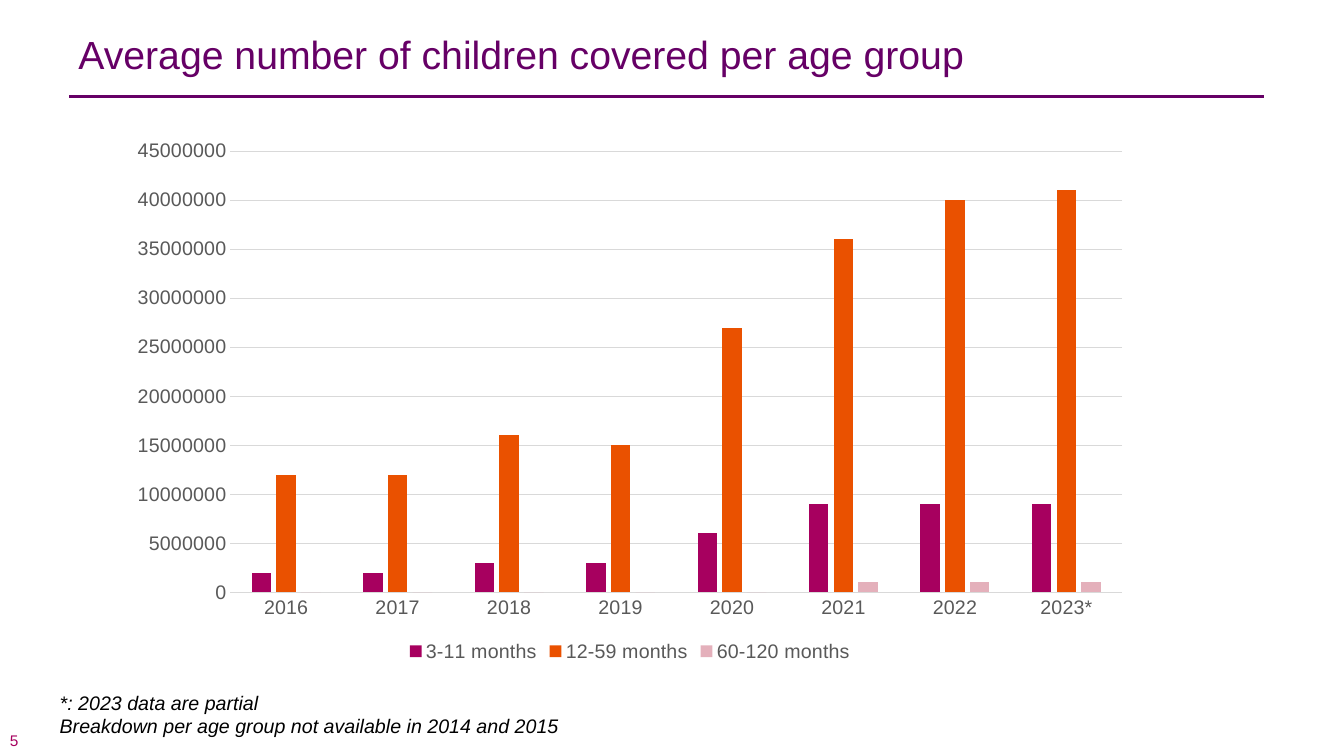
"""Build a slide with a column chart of children covered per age group."""
from lxml import etree
from pptx import Presentation
from pptx.chart.data import CategoryChartData
from pptx.dml.color import RGBColor
from pptx.enum.chart import XL_CHART_TYPE, XL_LEGEND_POSITION, XL_TICK_MARK
from pptx.enum.shapes import MSO_CONNECTOR
from pptx.enum.text import MSO_ANCHOR
from pptx.oxml.ns import qn
from pptx.util import Inches, Pt

COLUMN = XL_CHART_TYPE.COLUMN_CLUSTERED
BOTTOM = XL_LEGEND_POSITION.BOTTOM
NO_TICK = XL_TICK_MARK.NONE
STRAIGHT = MSO_CONNECTOR.STRAIGHT
TOP, MIDDLE = MSO_ANCHOR.TOP, MSO_ANCHOR.MIDDLE

FACE = "Arial"
HEX = {"plum": "660066", "wine": "A7005F", "orange": "EA5100", "pink": "E4B0BB",
       "label": "595959", "grid": "D9D9D9", "black": "000000"}
COLOR = {name: RGBColor.from_string(code) for name, code in HEX.items()}

deck = Presentation()
deck.slide_width, deck.slide_height = Inches(13.33), Inches(7.5)
slide = deck.slides.add_slide(deck.slide_layouts[6])
col, row = deck.slide_width / 100, deck.slide_height / 100


def place(left, top, width, height):
    """Turn percentages of the slide into lengths."""
    return [int(left * col), int(top * row), int(width * col), int(height * row)]


def style(font, size, color):
    """Set the face, size and colour of a font."""
    font.name, font.size = FACE, Pt(size)
    font.color.rgb = COLOR[color]


texts = [
    (["5"], (0, 96.7, 7.95, 2.4), 11, "wine", MIDDLE, False, None),
    (["Average number of children covered per age group"],
     (5.1, 4.8, 89, 10), 28, "plum", TOP, False, Pt(26)),
    (["*: 2023 data are partial", "Breakdown per age group not available in 2014 and 2015"],
     (3.7, 90.67, 70, 7.6), 14, "black", TOP, True, None),
]
for lines, area, size, color, anchor, slant, pitch in texts:
    frame = slide.shapes.add_textbox(*place(*area)).text_frame
    frame.word_wrap = True
    frame.vertical_anchor = anchor
    for spot, line in enumerate(lines):
        para = frame.add_paragraph() if spot else frame.paragraphs[0]
        para.line_spacing = pitch
        run = para.add_run()
        run.text = line
        run.font.italic = slant
        style(run.font, size, color)

left, level, right, _ = place(5.15, 12.8, 94.07, 0)
rule = slide.shapes.add_connector(STRAIGHT, left, level, right, level)
rule.line.color.rgb = COLOR["plum"]
rule.line.width = Pt(2)
etree.SubElement(rule._element.spPr, qn("a:effectLst"))

MILLION = 1000000
groups = [
    ("3-11 months", "wine", [2, 2, 3, 3, 6, 9, 9, 9]),
    ("12-59 months", "orange", [12, 12, 16, 15, 27, 36, 40, 41]),
    ("60-120 months", "pink", [0, 0, 0, 0, 0, 1, 1, 1]),
]
data = CategoryChartData()
data.categories = [str(year) for year in range(2016, 2023)] + ["2023*"]
for name, _, counts in groups:
    data.add_series(name, [count * MILLION for count in counts])

chart = slide.shapes.add_chart(COLUMN, *place(8.72, 17.12, 76.3, 71.03), data).chart
chart.has_title = False
style(chart.font, 10, "black")
chart.has_legend = True
chart.legend.position = BOTTOM
chart.legend.include_in_layout = False
style(chart.legend.font, 14, "label")

plot = chart.plots[0]
plot.vary_by_categories = False
plot.gap_width, plot.overlap = 219, -27
for bars, (_, color, _) in zip(plot.series, groups):
    bars.format.fill.solid()
    bars.format.fill.fore_color.rgb = COLOR[color]

years, scale = chart.category_axis, chart.value_axis
for axis in (years, scale):
    axis.major_tick_mark = axis.minor_tick_mark = NO_TICK
    style(axis.tick_labels.font, 14, "label")
scale.minimum_scale, scale.maximum_scale = 0, 45 * MILLION
scale.major_unit = 5 * MILLION
scale.tick_labels.number_format = "0"
scale.tick_labels.number_format_is_linked = False
scale.format.line.fill.background()
scale.has_major_gridlines = True
for part in (years, scale.major_gridlines):
    part.format.line.color.rgb = COLOR["grid"]
    part.format.line.width = Pt(0.75)

deck.save("out.pptx")
